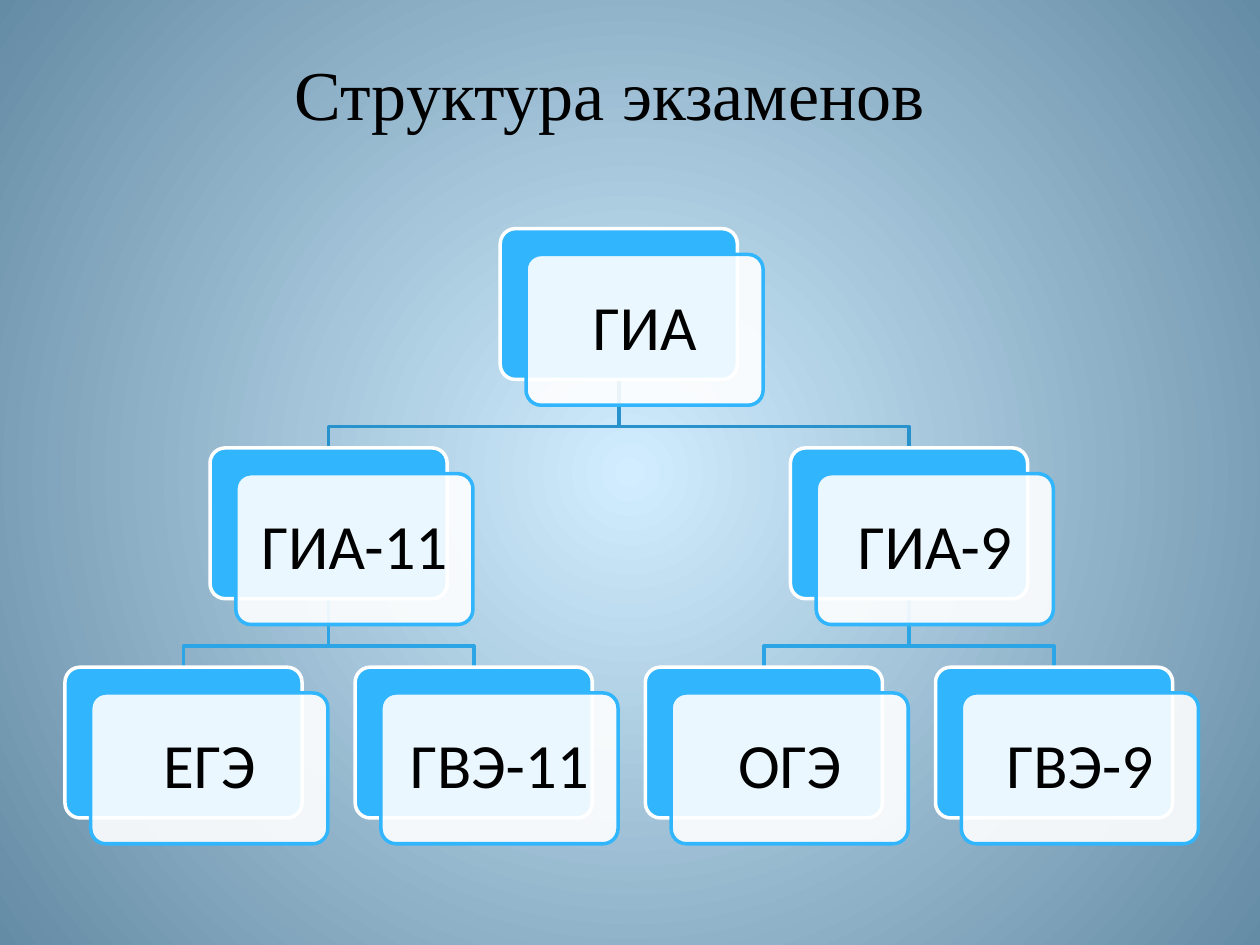
from dataclasses import dataclass

import pptx
import pptx.dml.color
import pptx.enum.shapes
import pptx.enum.text
import pptx.oxml
import pptx.oxml.ns
import pptx.util
from pptx.util import Cm, Pt


@dataclass(frozen=True)
class Theme:
    glow: str = "D1EDFF"
    edge: str = "658CA5"
    accent: str = "31B6FD"
    paper: str = "FFFFFF"
    ink: str = "000000"
    branch_lines: tuple = ("2792CB", "2CA5E6")
    title_font: str = "Times New Roman"
    card_font: str = "Calibri"
    title_size: int = 40
    card_size: int = 36
    line_width: int = 2


THEME = Theme()

# Each exam: label, and the exams below it
EXAMS = ("ГИА", [
    ("ГИА-11", [("ЕГЭ", []), ("ГВЭ-11", [])]),
    ("ГИА-9", [("ОГЭ", []), ("ГВЭ-9", [])]),
])

# Tree geometry in centimetres
CARD_WIDTH, CARD_HEIGHT = 4.78, 3.04
CARD_OFFSET = 0.52
FIRST_LEAF, LEAF_STEP = 3.7, 5.85
TOP, LEVEL_STEP = 4.61, 4.42
BEND = 0.95


def color(value):
    return pptx.dml.color.RGBColor.from_string(value)


def set_line(shape, value):
    shape.line.color.rgb = color(value)
    shape.line.width = Pt(THEME.line_width)
    shape.shadow.inherit = False


def style_text(paragraph, font, size):
    paragraph.font.name = font
    paragraph.font.size = Pt(size)
    paragraph.font.color.rgb = color(THEME.ink)


def set_background(page):
    fill = page.background.fill
    fill.gradient()
    for stop, value in zip(fill.gradient_stops, (THEME.glow, THEME.edge)):
        stop.color.rgb = color(value)
    # Turn the linear gradient into a circular one from the centre
    gradient = page.element.xpath(".//p:bg//a:gradFill")[0]
    for linear in gradient.xpath("a:lin"):
        gradient.remove(linear)
    gradient.append(pptx.oxml.parse_xml(
        f'<a:path {pptx.oxml.ns.nsdecls("a")} path="circle">'
        '<a:fillToRect l="50000" t="50000" r="50000" b="50000"/></a:path>'))


def add_title(page, text):
    title = page.shapes.title
    title.left, title.top = Cm(5.69), Cm(0.89)
    title.width, title.height = Cm(13.34), Cm(1.96)
    frame = title.text_frame
    frame.text = text
    frame.word_wrap = False
    frame.auto_size = pptx.enum.text.MSO_AUTO_SIZE.SHAPE_TO_FIT_TEXT
    frame.vertical_anchor = pptx.enum.text.MSO_ANCHOR.TOP
    frame.paragraphs[0].alignment = pptx.enum.text.PP_ALIGN.LEFT
    style_text(frame.paragraphs[0], THEME.title_font, THEME.title_size)


def add_panel(page, left, top, fill, line):
    panel = page.shapes.add_shape(
        pptx.enum.shapes.MSO_SHAPE.ROUNDED_RECTANGLE,
        Cm(left), Cm(top), Cm(CARD_WIDTH), Cm(CARD_HEIGHT))
    panel.adjustments[0] = 0.1
    panel.fill.solid()
    panel.fill.fore_color.rgb = color(fill)
    set_line(panel, line)
    return panel


def add_card(page, center, top, label):
    left = center - CARD_WIDTH / 2
    add_panel(page, left, top, THEME.accent, THEME.paper)
    front = add_panel(page, left + CARD_OFFSET, top + CARD_OFFSET,
                      THEME.paper, THEME.accent)
    # Let the back panel show through
    tint = front.element.xpath("./p:spPr/a:solidFill/a:srgbClr")[0]
    tint.append(pptx.oxml.parse_xml(
        f'<a:alpha {pptx.oxml.ns.nsdecls("a")} val="90000"/>'))

    frame = front.text_frame
    frame.text = label
    frame.word_wrap = True
    frame.vertical_anchor = pptx.enum.text.MSO_ANCHOR.MIDDLE
    frame.margin_left = frame.margin_right = Cm(0.36)
    frame.margin_top = frame.margin_bottom = Cm(0.36)
    para = frame.paragraphs[0]
    para.alignment = pptx.enum.text.PP_ALIGN.CENTER
    para.line_spacing = 0.9
    style_text(para, THEME.card_font, THEME.card_size)


def add_branch(page, start, end, top, line):
    bottom = top + CARD_HEIGHT
    bend = bottom + BEND
    builder = page.shapes.build_freeform(Cm(start), Cm(bottom))
    builder.add_line_segments(
        [(Cm(start), Cm(bend)), (Cm(end), Cm(bend)),
         (Cm(end), Cm(top + LEVEL_STEP))], close=False)
    branch = builder.convert_to_shape()
    branch.fill.background()
    set_line(branch, line)


def place_exams(exam, level=0, first_leaf=0):
    """Return cards, branches, centre and leaf count; parents sit mid-children."""
    label, children = exam
    top = TOP + level * LEVEL_STEP
    cards, branches, centers, leaves = [], [], [], 0
    for child in children:
        below = place_exams(child, level + 1, first_leaf + leaves)
        cards += below[0]
        branches += below[1]
        centers.append(below[2])
        leaves += below[3]
    if centers:
        center = (centers[0] + centers[-1]) / 2
    else:
        center = FIRST_LEAF + first_leaf * LEAF_STEP
    branches += [(center, end, top, THEME.branch_lines[level])
                 for end in centers]
    return [(center, top, label)] + cards, branches, center, max(leaves, 1)


def main():
    deck = pptx.Presentation()
    deck.slide_width, deck.slide_height = Cm(25.4), Cm(19.05)
    page = deck.slides.add_slide(deck.slide_layouts.get_by_name("Title Only"))
    set_background(page)
    add_title(page, "Структура экзаменов")

    # Branches go behind the cards
    cards, branches, _, _ = place_exams(EXAMS)
    for branch in branches:
        add_branch(page, *branch)
    for card in cards:
        add_card(page, *card)
    deck.save("out.pptx")


if __name__ == "__main__":
    main()
